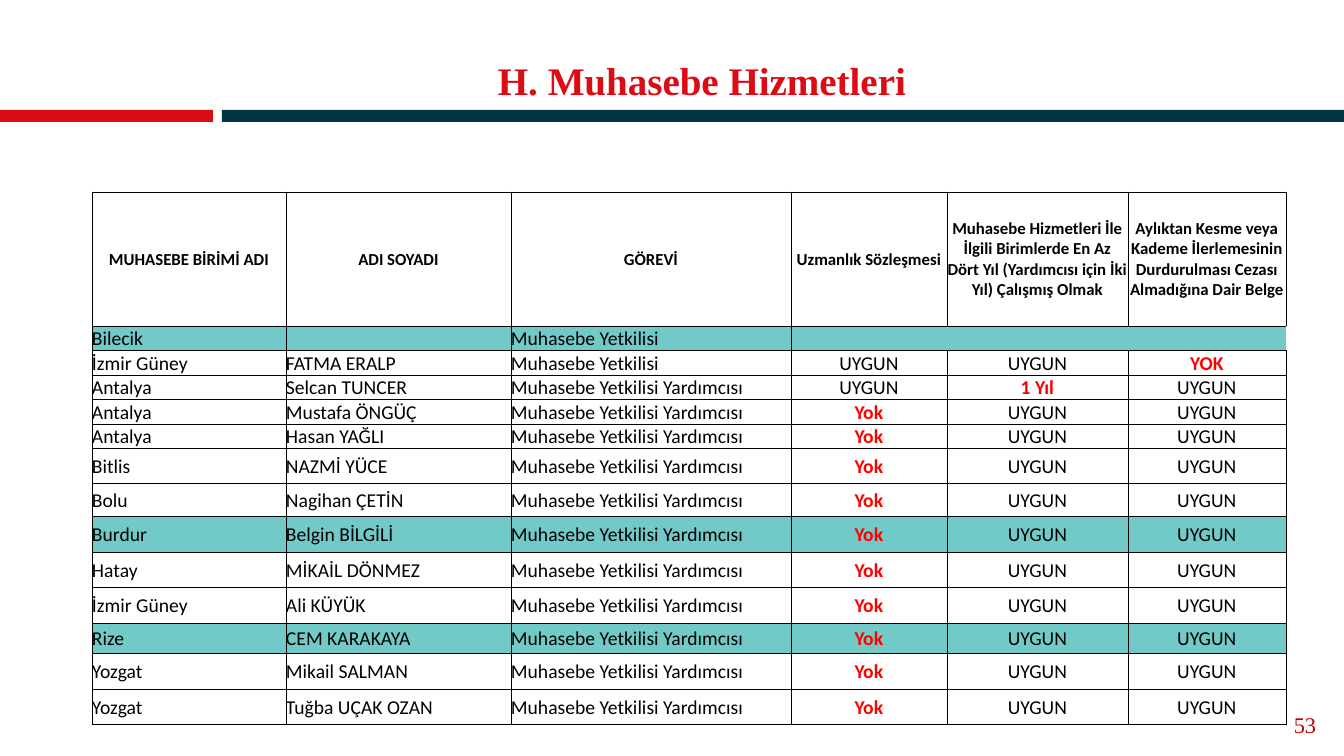
from lxml.etree import SubElement
from pptx import Presentation
from pptx.dml.color import RGBColor
from pptx.enum.shapes import MSO_SHAPE
from pptx.enum.text import MSO_ANCHOR as Anchor, MSO_AUTO_SIZE as AutoSize, PP_ALIGN as Align
from pptx.oxml.ns import qn
from pptx.util import Emu, Pt

TITLE = "H. Muhasebe Hizmetleri"
PAGE_NUMBER = "53"
HEADERS = (
    "MUHASEBE BİRİMİ ADI",
    "ADI SOYADI",
    "GÖREVİ",
    "Uzmanlık Sözleşmesi",
    "Muhasebe Hizmetleri İle İlgili Birimlerde En Az Dört Yıl "
    "(Yardımcısı için İki Yıl) Çalışmış Olmak",
    "Aylıktan Kesme veya Kademe İlerlemesinin Durdurulması Cezası "
    "Almadığına Dair Belge",
)
OFFICER = "Muhasebe Yetkilisi"
DEPUTY = "Muhasebe Yetkilisi Yardımcısı"
OK = "UYGUN"
MISSING = ("Yok", OK, OK)
STAFF = [
    ("Bilecik", "", OFFICER, "", "", ""),
    ("İzmir Güney", "FATMA ERALP", OFFICER, OK, OK, "YOK"),
    ("Antalya", "Selcan TUNCER", DEPUTY, OK, "1 Yıl", OK),
    ("Antalya", "Mustafa ÖNGÜÇ", DEPUTY, *MISSING),
    ("Antalya", "Hasan YAĞLI", DEPUTY, *MISSING),
    ("Bitlis", "NAZMİ YÜCE", DEPUTY, *MISSING),
    ("Bolu", "Nagihan ÇETİN", DEPUTY, *MISSING),
    ("Burdur", "Belgin BİLGİLİ", DEPUTY, *MISSING),
    ("Hatay", "MİKAİL DÖNMEZ", DEPUTY, *MISSING),
    ("İzmir Güney", "Ali KÜYÜK", DEPUTY, *MISSING),
    ("Rize", "CEM KARAKAYA", DEPUTY, *MISSING),
    ("Yozgat", "Mikail SALMAN", DEPUTY, *MISSING),
    ("Yozgat", "Tuğba UÇAK OZAN", DEPUTY, *MISSING),
]
HIGHLIGHTED = {"Bilecik", "Burdur", "Rize"}
VACANT_ROW = 1
FIRST_CHECK = 3  # first of the three requirement columns

COLORS = {"red": "DC0C15", "navy": "003546", "teal": "71CAC8",
          "black": "000000", "alert": "FF0000", "number": "C00000"}
BARS = [(0, 213, "red"), (222, 1122, "navy")]
COLUMN_WIDTHS = [194, 225, 280, 156, 181, 158]
ROW_HEIGHTS = [134] + [22] * 5 + [35, 33, 36, 35, 36, 30, 36, 35]


def px(length):
    return Emu(round(length * 12192000 / 1344))


def color(name):
    return RGBColor.from_string(COLORS[name])


def set_all(target, values):
    for name, value in values.items():
        setattr(target, name, value)


def write(para, text, font, size, tone, bold, align):
    para.alignment = align
    if not text:
        SubElement(para._p, qn("a:endParaRPr"), sz=str(size * 100))
        return
    span = para.add_run()
    span.text = text
    set_all(span.font, {"name": font, "size": Pt(size), "bold": bold})
    span.font.color.rgb = color(tone)


def add_borders(cell, hidden):
    """Draw thin black cell edges, leaving out the sides in hidden."""
    properties = cell._tc.get_or_add_tcPr()
    for side in "LRTB":
        line = SubElement(properties, qn(f"a:ln{side}"), w=str(Pt(0.5)))
        if side in hidden:
            SubElement(line, qn("a:noFill"))
        else:
            fill = SubElement(line, qn("a:solidFill"))
            SubElement(fill, qn("a:srgbClr"), val=COLORS["black"])


def add_bars(page):
    for left, width, tone in BARS:
        bar = page.shapes.add_shape(MSO_SHAPE.RECTANGLE, px(left), px(110), px(width), px(12))
        bar.shadow.inherit = False
        bar.fill.solid()
        bar.fill.fore_color.rgb = color(tone)
        bar.line.fill.background()


def add_title(page):
    title = page.shapes.title
    set_all(title, {"left": 0, "top": px(14), "width": px(1344), "height": px(81)})
    frame = title.text_frame
    set_all(frame, {"auto_size": AutoSize.NONE, "vertical_anchor": Anchor.TOP, "word_wrap": True,
                    "margin_left": px(60), "margin_right": 0,
                    "margin_top": px(42), "margin_bottom": 0})
    para = frame.paragraphs[0]
    set_all(para, {"line_spacing": 1.0, "space_before": Pt(0)})
    write(para, TITLE, "Times New Roman", 27.9, "red", True, Align.CENTER)


def add_page_number(page):
    box = page.shapes.add_textbox(px(1235), px(705), px(91), px(40))
    set_all(box.text_frame, {"word_wrap": True, "vertical_anchor": Anchor.MIDDLE})
    write(box.text_frame.paragraphs[0], PAGE_NUMBER, "Times New Roman", 16,
          "number", False, Align.RIGHT)


def add_staff_table(page):
    rows = [HEADERS, *STAFF]
    table = page.shapes.add_table(len(rows), len(HEADERS), px(92), px(192),
                                  px(sum(COLUMN_WIDTHS)), px(sum(ROW_HEIGHTS))).table
    set_all(table, {"first_row": False, "horz_banding": False})
    for column, width in zip(table.columns, COLUMN_WIDTHS):
        column.width = px(width)
    for row, height in zip(table.rows, ROW_HEIGHTS):
        row.height = px(height)
    for r, values in enumerate(rows):
        for c, text in enumerate(values):
            cell = table.cell(r, c)
            set_all(cell, {"vertical_anchor": Anchor.MIDDLE, "margin_left": 0,
                           "margin_right": 0, "margin_top": px(1), "margin_bottom": 0})
            is_header, is_check = r == 0, c >= FIRST_CHECK
            alert = is_check and not is_header and text != OK
            write(cell.text_frame.paragraphs[0], text, "Calibri", 12 if is_header else 14,
                  "alert" if alert else "black", is_header or alert,
                  Align.CENTER if is_header or is_check else Align.LEFT)
            add_borders(cell, "R" if r == VACANT_ROW and is_check else "")
            if values[0] in HIGHLIGHTED:
                cell.fill.solid()
                cell.fill.fore_color.rgb = color("teal")
            else:
                cell.fill.background()
    table.cell(VACANT_ROW, FIRST_CHECK).merge(table.cell(VACANT_ROW, len(HEADERS) - 1))


def main():
    deck = Presentation()
    set_all(deck, {"slide_width": px(1344), "slide_height": px(756)})
    page = deck.slides.add_slide(deck.slide_layouts[5])
    add_bars(page)
    add_page_number(page)
    add_title(page)
    add_staff_table(page)
    deck.save("out.pptx")


if __name__ == "__main__":
    main()
